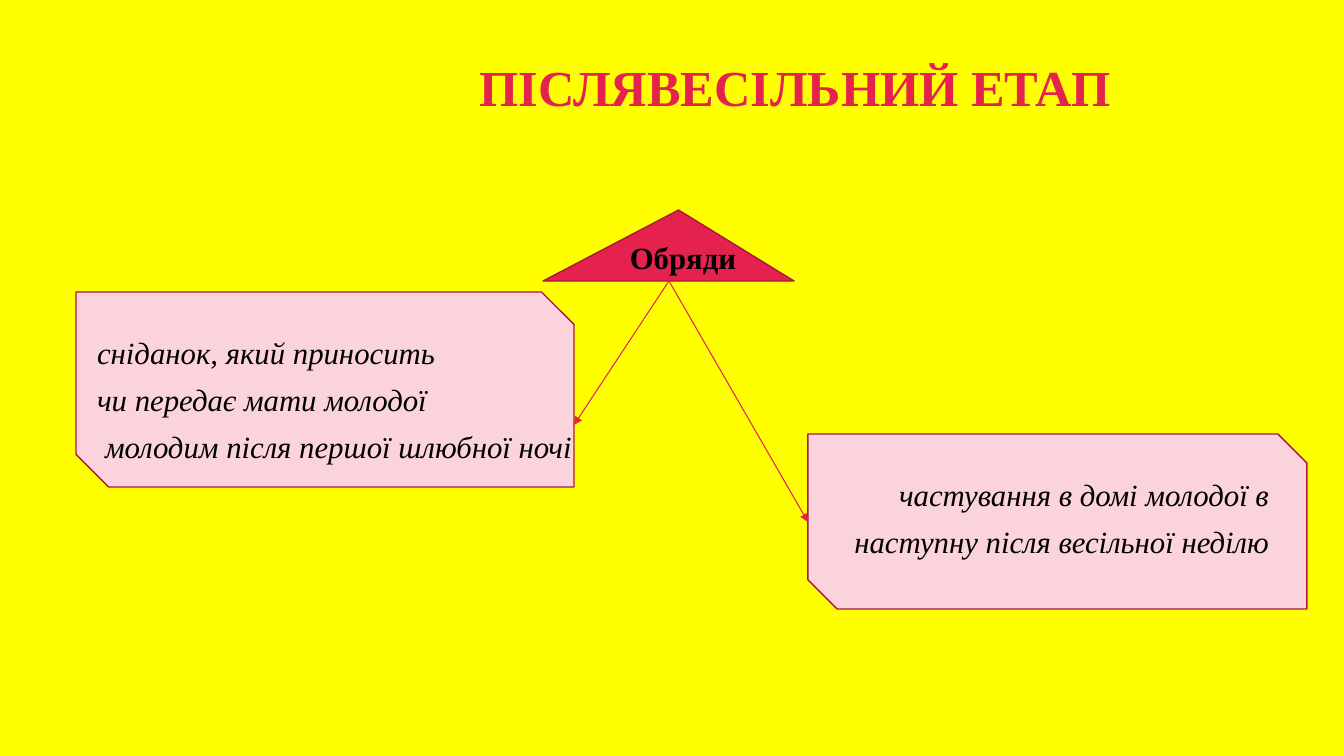
from pptx import Presentation
from pptx.dml.color import RGBColor
from pptx.enum.shapes import MSO_CONNECTOR, MSO_SHAPE
from pptx.enum.text import MSO_ANCHOR, MSO_AUTO_SIZE, PP_ALIGN
from pptx.oxml.ns import qn
from pptx.util import Pt
from lxml import etree

PX = 914400 / 100.8
THEME = {
    "font": "Times New Roman", "title_size": Pt(36), "body_size": Pt(22),
    "background": RGBColor.from_string("FFFF00"),
    "accent": RGBColor.from_string("E5224E"),
    "outline": RGBColor.from_string("A9193A"),
    "card": RGBColor.from_string("FAD3DC"),
    "text": RGBColor.from_string("000000"),
}


def px(*lengths):
    return [round(n * PX) for n in lengths]


def write(p, text, align, **font):
    p.alignment, p.line_spacing = align, 0.9
    r = p.add_run()
    r.text = text
    r.font.name = THEME["font"]
    r.font.color.rgb = font.pop("color")
    for name, value in font.items():
        setattr(r.font, name, value)


prs = Presentation()
prs.slide_width, prs.slide_height = px(1344, 756)
s = prs.slides.add_slide(prs.slide_layouts[1])
s.background.fill.solid()
s.background.fill.fore_color.rgb = THEME["background"]
title, body = s.placeholders

# Cards and triangle, kept behind the text
for kind, box, fill in [
    (MSO_SHAPE.SNIP_2_DIAG_RECTANGLE, (808, 434, 499, 175), "card"),
    (MSO_SHAPE.SNIP_2_DIAG_RECTANGLE, (76, 292, 498, 195), "card"),
    (MSO_SHAPE.ISOSCELES_TRIANGLE, (543, 210, 251, 71), "accent"),
]:
    sp = s.shapes.add_shape(kind, *px(*box))
    sp.shadow.inherit = False
    sp.fill.solid()
    sp.fill.fore_color.rgb = THEME[fill]
    sp.line.color.rgb = THEME["outline"]
    sp.line.width = Pt(1)
    if kind == MSO_SHAPE.ISOSCELES_TRIANGLE:
        sp.adjustments[0] = 0.54
    title._element.addprevious(sp._element)

# Title and body frames
for sp, box, anchor in [
    (title, (320, 46, 950, 88), MSO_ANCHOR.MIDDLE),
    (body, (87, 238, 1192, 446), MSO_ANCHOR.TOP),
]:
    sp.left, sp.top, sp.width, sp.height = px(*box)
    tf = sp.text_frame
    tf.word_wrap, tf.auto_size, tf.vertical_anchor = True, MSO_AUTO_SIZE.NONE, anchor

write(title.text_frame.paragraphs[0], "ПІСЛЯВЕСІЛЬНИЙ ЕТАП", PP_ALIGN.CENTER,
      size=THEME["title_size"], bold=True, color=THEME["accent"])

# Rites: text, alignment, space before in points, left margin in px
tf = body.text_frame
for i, (text, align, before, margin) in enumerate([
    ("Обряди", PP_ALIGN.CENTER, 0, 0),
    ("сніданок, який приносить", PP_ALIGN.LEFT, 44, 0),
    ("чи передає мати молодої", PP_ALIGN.LEFT, 10, 0),
    ("молодим після першої шлюбної ночі", PP_ALIGN.LEFT, 10, 8),
    ("частування в домі молодої в", PP_ALIGN.RIGHT, 10, 0),
    ("наступну після весільної неділю", PP_ALIGN.RIGHT, 10, 0),
]):
    p = tf.add_paragraph() if i else tf.paragraphs[0]
    pPr = p._p.get_or_add_pPr()
    pPr.set("marL", str(px(margin)[0]))
    pPr.set("indent", "0")
    etree.SubElement(pPr, qn("a:buNone"))
    p.space_before = Pt(before)
    write(p, text, align, size=THEME["body_size"], bold=i == 0, italic=i > 0,
          color=THEME["text"])

# Arrows from the triangle to the cards
for end in [(574, 425), (808, 522)]:
    arrow = s.shapes.add_connector(MSO_CONNECTOR.STRAIGHT, *px(669, 281, *end))
    arrow.line.color.rgb = THEME["accent"]
    arrow.line.width = Pt(0.75)
    etree.SubElement(arrow.line._get_or_add_ln(), qn("a:tailEnd"), type="triangle")
    etree.SubElement(arrow._element.spPr, qn("a:effectLst"))

prs.save("out.pptx")
